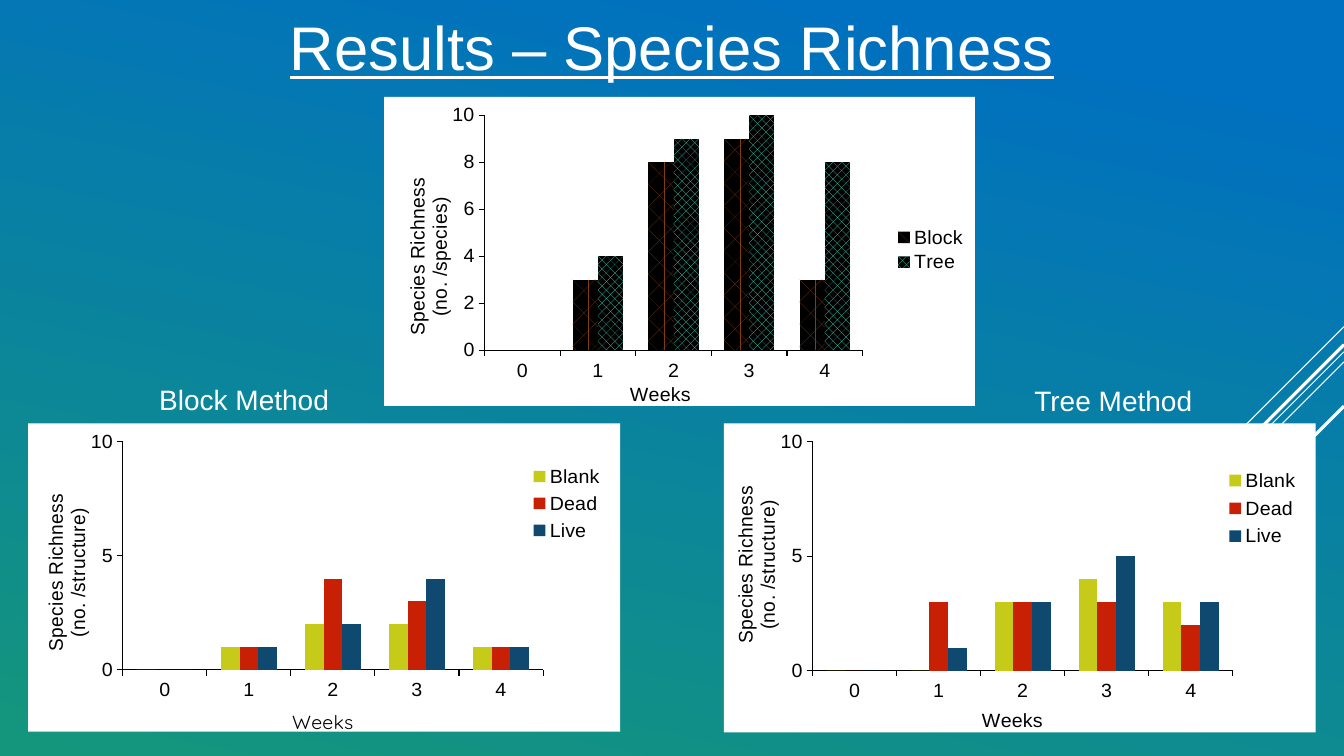
from dataclasses import dataclass

from lxml import etree
from pptx import Presentation
from pptx.chart.data import CategoryChartData
from pptx.dml.color import RGBColor
from pptx.enum.chart import XL_CHART_TYPE, XL_LEGEND_POSITION, XL_TICK_MARK
from pptx.enum.dml import MSO_PATTERN
from pptx.enum.shapes import MSO_CONNECTOR
from pptx.enum.text import MSO_AUTO_SIZE, PP_ALIGN
from pptx.oxml import parse_xml
from pptx.oxml.ns import nsdecls, qn
from pptx.util import Emu, Pt

WHITE = RGBColor(0xFF, 0xFF, 0xFF)
BLACK = RGBColor(0x00, 0x00, 0x00)
BLUE = RGBColor(0x00, 0x70, 0xC0)
GREEN = RGBColor(0x14, 0x96, 0x7C)
LIME = RGBColor(0xC6, 0xCA, 0x18)
RED = RGBColor(0xC8, 0x20, 0x04)
NAVY = RGBColor(0x0F, 0x49, 0x6F)
BROWN = RGBColor(0x81, 0x3C, 0x0F)
MINT = RGBColor(0x4B, 0xE7, 0xC8)

COLUMNS = XL_CHART_TYPE.COLUMN_CLUSTERED
RIGHT = XL_LEGEND_POSITION.RIGHT
BOTTOM = XL_LEGEND_POSITION.BOTTOM
OUTSIDE = XL_TICK_MARK.OUTSIDE
DIVOT = MSO_PATTERN.from_xml("divot")
PERCENT_40 = MSO_PATTERN.from_xml("pct40")
STRAIGHT = MSO_CONNECTOR.STRAIGHT
FIT_SHAPE = MSO_AUTO_SIZE.SHAPE_TO_FIT_TEXT
LEFT_ALIGN = PP_ALIGN.LEFT
CENTER = PP_ALIGN.CENTER

BODY_FONT = "Arial"
THEME_FONT = "Quicksand"
EMU_PER_PX = 9144
WEEKS = ("0", "1", "2", "3", "4")


def px(length: int) -> Emu:
    return Emu(length * EMU_PER_PX)


@dataclass(frozen=True)
class Stripe:
    top: int
    run: int
    weight: float


@dataclass(frozen=True)
class Label:
    text: str
    box: tuple[int, int, int, int]
    size: int
    align: PP_ALIGN
    underline: bool = False


@dataclass(frozen=True)
class Bars:
    name: str
    values: tuple[int, ...]
    color: RGBColor
    pattern: MSO_PATTERN | None = None


@dataclass(frozen=True)
class RichnessChart:
    box: tuple[int, int, int, int]
    unit: str
    step: int
    gap: int
    plot: tuple[float, ...]
    legend: tuple[float, ...]
    legend_side: XL_LEGEND_POSITION
    week_title: tuple[float, ...]
    value_title: tuple[float, ...]
    bars: tuple[Bars, ...]
    week_font: str = BODY_FONT


def structure_bars(blank: tuple[int, ...], dead: tuple[int, ...],
                   live: tuple[int, ...]) -> tuple[Bars, ...]:
    return Bars("Blank", blank, LIME), Bars("Dead", dead, RED), Bars("Live", live, NAVY)


STRIPES = (
    Stripe(324, 100, 0.75),
    Stripe(349, 326, 0.75),
    Stripe(359, 207, 0.75),
    Stripe(342, 191, 2.25),
    Stripe(403, 139, 2.25),
)
LABELS = (
    Label("Results – Species Richness", (0, 4, 1333, 84), 44, CENTER, True),
    Label("Tree Method", (1016, 376, 179, 44), 20, LEFT_ALIGN),
    Label("Block Method", (148, 375, 233, 44), 20, LEFT_ALIGN),
)
CHARTS = (
    RichnessChart((718, 420, 587, 312), "structure", 5, 150,
                  (0.15, 0.06, 0.71, 0.74), (0.84, 0.13, 0.14, 0.29), RIGHT,
                  (0.43, 0.91), (0.01, 0.2),
                  structure_bars((0, 0, 3, 4, 3), (0, 3, 3, 3, 2), (0, 1, 3, 5, 3))),
    RichnessChart((28, 420, 587, 314), "structure", 5, 150,
                  (0.16, 0.06, 0.71, 0.74), (0.84, 0.12, 0.14, 0.28), BOTTOM,
                  (0.44, 0.91), (0.02, 0.23),
                  structure_bars((0, 1, 2, 2, 1), (0, 1, 4, 3, 1), (0, 1, 2, 4, 1)),
                  THEME_FONT),
    RichnessChart((381, 96, 586, 312), "species", 2, 100,
                  (0.17, 0.06, 0.64, 0.76), (0.86, 0.41, 0.13, 0.17), RIGHT,
                  (0.41, 0.91), (0.03, 0.26),
                  (Bars("Block", (0, 3, 8, 9, 3), BROWN, DIVOT),
                   Bars("Tree", (0, 4, 9, 12, 8), MINT, PERCENT_40))),
)


def style_font(font, size: int, color: RGBColor, name: str = BODY_FONT) -> None:
    font.size = Pt(size)
    font.name = name
    font.bold = False
    font.color.rgb = color


def place(parent, index: int, spot: tuple[float, ...], inner: bool = False) -> None:
    for old in parent.findall(qn("c:layout")):
        parent.remove(old)
    layout = parse_xml(f"<c:layout {nsdecls('c')}><c:manualLayout/></c:layout>")
    settings = [("layoutTarget", "inner")] if inner else []
    settings += [("xMode", "edge"), ("yMode", "edge")]
    settings += [(key, str(value)) for key, value in zip("xywh", spot)]
    for key, value in settings:
        etree.SubElement(layout[0], qn(f"c:{key}")).set("val", value)
    parent.insert(index, layout)


def style_axis(axis, title: str, spot: tuple[float, ...], title_font: str) -> None:
    axis.has_major_gridlines = False
    axis.major_tick_mark = OUTSIDE
    axis.format.line.color.rgb = BLACK
    axis.format.line.width = Pt(0.75)
    style_font(axis.tick_labels.font, 14, BLACK)
    frame = axis.axis_title.text_frame
    frame.text = title
    for paragraph in frame.paragraphs:
        style_font(paragraph.font, 14, BLACK, title_font)
    place(frame._txBody.getparent().getparent(), 1, spot)


def add_richness_chart(page, item: RichnessChart) -> None:
    data = CategoryChartData(number_format="0")
    data.categories = WEEKS
    for bars in item.bars:
        data.add_series(bars.name, bars.values)
    chart = page.shapes.add_chart(COLUMNS, *map(px, item.box), data).chart
    chart.has_title = False
    style_font(chart.font, 10, WHITE, THEME_FONT)
    space = chart._chartSpace
    space.find(qn("c:txPr")).addprevious(parse_xml(
        f"<c:spPr {nsdecls('c', 'a')}><a:solidFill><a:srgbClr val='{WHITE}'/>"
        "</a:solidFill><a:ln><a:noFill/></a:ln></c:spPr>"))
    place(space.chart.plotArea, 0, item.plot, inner=True)

    style_axis(chart.category_axis, "Weeks", item.week_title, item.week_font)
    value_axis = chart.value_axis
    style_axis(value_axis, f"Species Richness\n(no. /{item.unit})",
               item.value_title, BODY_FONT)
    value_axis.minimum_scale = 0
    value_axis.maximum_scale = 10
    value_axis.major_unit = item.step
    value_axis.tick_labels.number_format = "0"
    value_axis.tick_labels.number_format_is_linked = False

    chart.has_legend = True
    chart.legend.position = item.legend_side
    chart.legend.include_in_layout = False
    style_font(chart.legend.font, 14, BLACK)
    place(chart.legend._element, 1, item.legend)

    plot = chart.plots[0]
    plot.gap_width = item.gap
    plot.overlap = 0
    plot.vary_by_categories = False
    for series, bars in zip(plot.series, item.bars):
        fill = series.format.fill
        if bars.pattern is None:
            fill.solid()
        else:
            fill.patterned()
            fill.pattern = bars.pattern
            fill.back_color.rgb = BLACK
        fill.fore_color.rgb = bars.color


def add_stripe(page, stripe: Stripe) -> None:
    line = page.shapes.add_connector(STRAIGHT, px(1333), px(stripe.top),
                                     px(1333 - stripe.run), px(stripe.top + stripe.run))
    line.line.color.rgb = WHITE
    line.line.width = Pt(stripe.weight)
    etree.SubElement(line._element.spPr, qn("a:effectLst"))


def add_label(page, label: Label) -> None:
    frame = page.shapes.add_textbox(*map(px, label.box)).text_frame
    frame.word_wrap = True
    frame.auto_size = FIT_SHAPE
    frame.text = label.text
    para = frame.paragraphs[0]
    para.alignment = label.align
    style_font(para.font, label.size, WHITE)
    para.font.underline = label.underline


def main() -> None:
    deck = Presentation()
    deck.slide_width, deck.slide_height = px(1333), px(750)
    page = deck.slides.add_slide(deck.slide_layouts[6])
    backdrop = page.background.fill
    backdrop.gradient()
    backdrop.gradient_angle = 258
    for stop, color, position in zip(backdrop.gradient_stops, (BLUE, GREEN), (0.1, 1)):
        stop.color.rgb = color
        stop.position = position
    for stripe in STRIPES:
        add_stripe(page, stripe)
    for chart in CHARTS:
        add_richness_chart(page, chart)
    for label in LABELS:
        add_label(page, label)
    deck.save("out.pptx")


if __name__ == "__main__":
    main()
